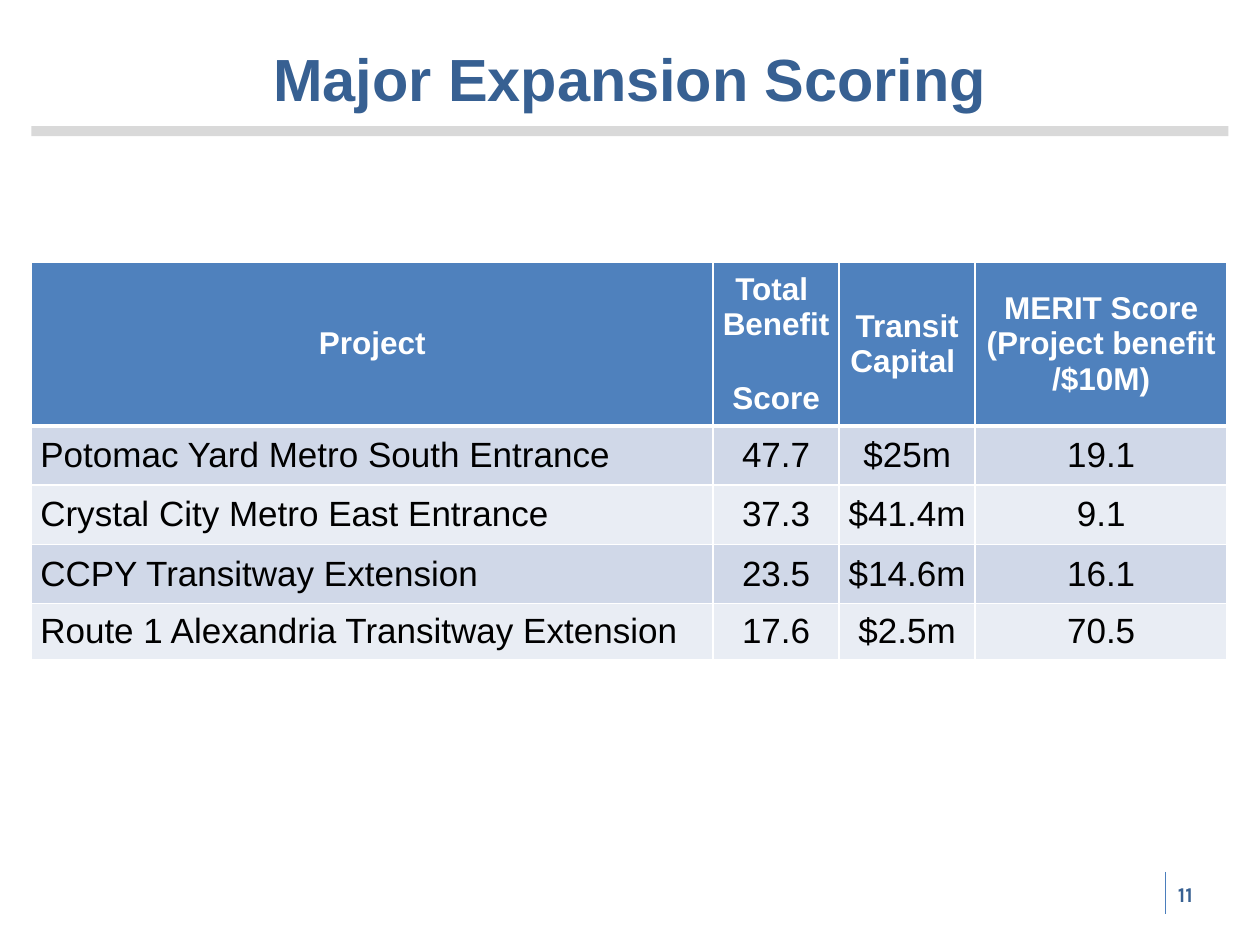
from lxml import etree
from pptx import Presentation
from pptx.dml.color import RGBColor
from pptx.enum.shapes import MSO_CONNECTOR, MSO_SHAPE
from pptx.enum.text import MSO_ANCHOR, PP_ALIGN
from pptx.oxml.ns import qn
from pptx.util import Inches, Pt

LEFT, CENTER = PP_ALIGN.LEFT, PP_ALIGN.CENTER
MIDDLE = MSO_ANCHOR.MIDDLE
RECTANGLE = MSO_SHAPE.RECTANGLE
STRAIGHT = MSO_CONNECTOR.STRAIGHT

COLORS = {
    "navy": "376092", "rule": "D9D9D9", "divider": "4B7EBC",
    "header": "4F81BD", "odd": "D0D8E8", "even": "E9EDF4",
    "white": "FFFFFF", "black": "000000",
}
MARGIN = 0.25
COLUMN_WIDTHS = [5.41, 1, 1.08, 2]
ROW_HEIGHTS = [1, 0.47, 0.47, 0.47, 0.45]
ROWS = [
    ["Project", "Total \nBenefit \nScore", "Transit Capital ",
     "MERIT Score\n(Project benefit\n/$10M)"],
    ["Potomac Yard Metro South Entrance", "47.7", "$25m", "19.1"],
    ["Crystal City Metro East Entrance", "37.3", "$41.4m", "9.1"],
    ["CCPY Transitway Extension", "23.5", "$14.6m", "16.1"],
    ["Route 1 Alexandria Transitway Extension", "17.6", "$2.5m", "70.5"],
]


def color(name):
    return RGBColor.from_string(COLORS[name])


def write(frame, text, size, ink, font="Arial", bold=False, align=LEFT):
    """Fill the frame with one paragraph; newlines become line breaks."""
    frame.word_wrap = True
    para = frame.paragraphs[0]
    para.text = text
    para.alignment = align
    for span in para.runs:
        span.font.name = font
        span.font.size = Pt(size)
        span.font.bold = bold
        span.font.color.rgb = color(ink)


def add_title(page, text):
    title = page.shapes.title
    title.left, title.top = Inches(0.5), Inches(0.16)
    title.width, title.height = Inches(9), Inches(0.92)
    title.text_frame.vertical_anchor = MIDDLE
    write(title.text_frame, text, 34, "navy", bold=True, align=CENTER)


def add_title_rule(page):
    rule = page.shapes.add_shape(
        RECTANGLE, Inches(MARGIN), Inches(1), Inches(10 - 2 * MARGIN), Inches(0.08))
    rule.shadow.inherit = False
    rule.fill.solid()
    rule.fill.fore_color.rgb = color("rule")
    rule.line.fill.background()


def add_page_number(page, number):
    x = Inches(9.25)
    divider = page.shapes.add_connector(STRAIGHT, x, Inches(6.92), x, Inches(7.25))
    divider.line.color.rgb = color("divider")
    divider.line.width = Pt(0.75)
    etree.SubElement(divider._element.spPr, qn("a:effectLst"))
    box = page.shapes.add_textbox(x, Inches(6.9), Inches(0.42), Inches(0.4))
    box.text_frame.vertical_anchor = MIDDLE
    write(box.text_frame, str(number), 12, "navy", font="Karla", bold=True)


def set_borders(cell, **widths):
    """Draw white borders; widths are points by side, in the order L, R, T, B."""
    properties = cell._tc.get_or_add_tcPr()
    for side, width in widths.items():
        line = etree.SubElement(properties, qn(f"a:ln{side}"), w=str(Pt(width)))
        fill = etree.SubElement(line, qn("a:solidFill"))
        etree.SubElement(fill, qn("a:srgbClr"), val=COLORS["white"])


def format_cell(cell, text, row, column):
    header = row == 0
    set_borders(cell, L=1, R=1, T=3 if row == 1 else 1, B=3 if header else 1)
    cell.fill.solid()
    cell.fill.fore_color.rgb = color("header" if header else "odd" if row % 2 else "even")
    cell.vertical_anchor = MIDDLE
    cell.margin_left = cell.margin_right = Inches(0.07)
    cell.margin_top = cell.margin_bottom = Inches(0.05)
    write(cell.text_frame, text, 18 if header else 20,
          "white" if header else "black", bold=header,
          align=CENTER if header or column else LEFT)


def add_score_table(page):
    table = page.shapes.add_table(
        len(ROWS), len(COLUMN_WIDTHS), Inches(MARGIN), Inches(2.08),
        Inches(sum(COLUMN_WIDTHS)), Inches(sum(ROW_HEIGHTS))).table
    for column, width in zip(table.columns, COLUMN_WIDTHS):
        column.width = Inches(width)
    for row, height in zip(table.rows, ROW_HEIGHTS):
        row.height = Inches(height)
    for r, texts in enumerate(ROWS):
        for c, text in enumerate(texts):
            format_cell(table.cell(r, c), text, r, c)


def main():
    deck = Presentation()
    deck.slide_width, deck.slide_height = Inches(10), Inches(7.5)
    page = deck.slides.add_slide(deck.slide_layouts[5])
    add_title_rule(page)
    add_title(page, "Major Expansion Scoring")
    add_page_number(page, 11)
    add_score_table(page)
    deck.save("out.pptx")


if __name__ == "__main__":
    main()
